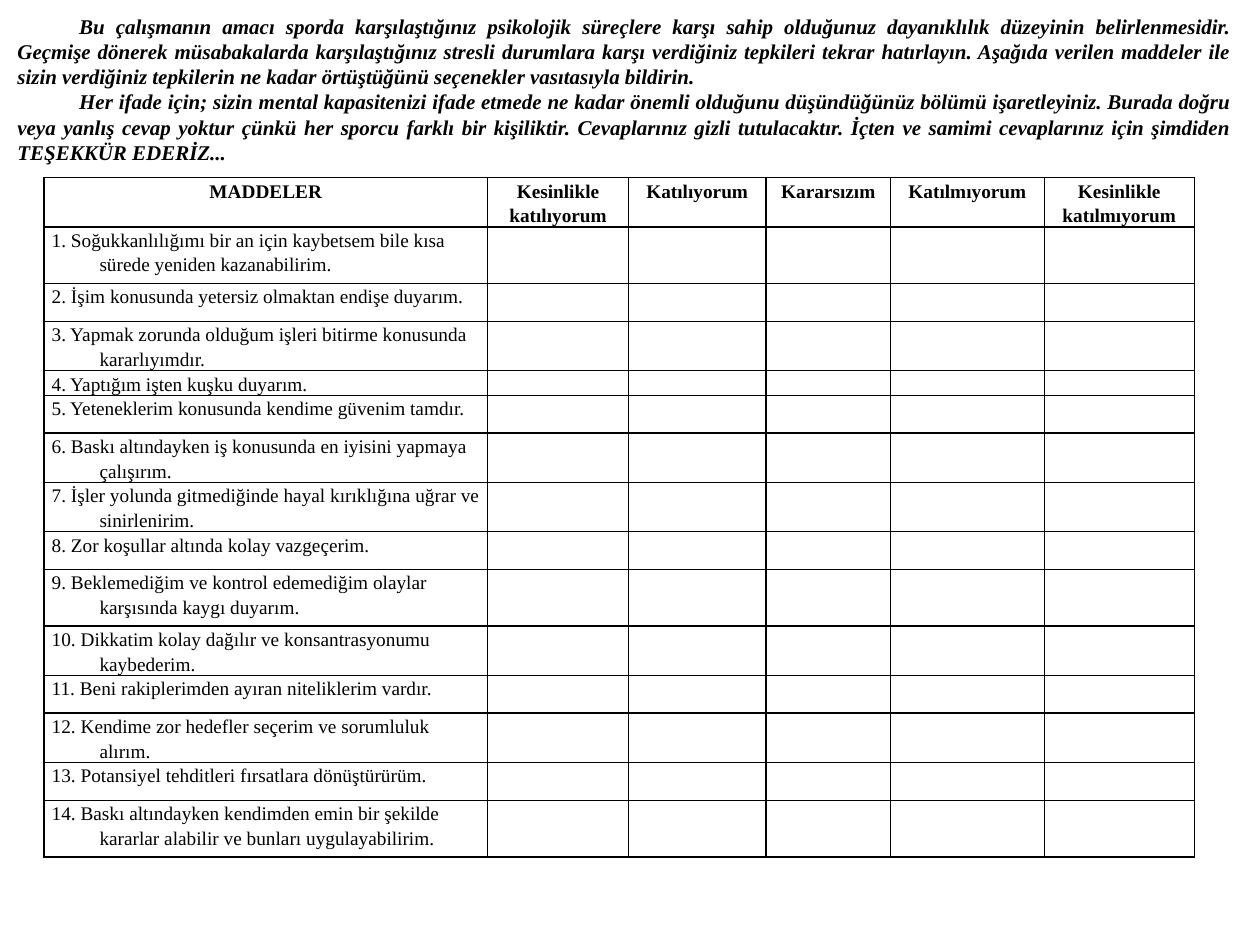
from dataclasses import dataclass

from lxml.etree import SubElement
from pptx import Presentation
from pptx.dml.color import RGBColor
from pptx.enum.text import MSO_ANCHOR, MSO_AUTO_SIZE, PP_ALIGN as Align
from pptx.oxml import parse_xml
from pptx.oxml.ns import nsdecls, qn
from pptx.util import Inches, Pt


@dataclass(frozen=True)
class Theme:
    font: str = "Times New Roman"
    ink: str = "000000"
    intro_size: int = 12
    table_size: int = 11
    border: int = 1


THEME = Theme()

INTRO = [
    "Bu çalışmanın amacı sporda karşılaştığınız psikolojik süreçlere karşı sahip "
    "olduğunuz dayanıklılık düzeyinin belirlenmesidir. Geçmişe dönerek müsabakalarda "
    "karşılaştığınız stresli durumlara karşı verdiğiniz tepkileri tekrar hatırlayın. "
    "Aşağıda verilen maddeler ile sizin verdiğiniz tepkilerin ne kadar örtüştüğünü "
    "seçenekler vasıtasıyla bildirin.",
    "Her ifade için; sizin mental kapasitenizi ifade etmede ne kadar önemli olduğunu "
    "düşündüğünüz bölümü işaretleyiniz. Burada doğru veya yanlış cevap yoktur çünkü "
    "her sporcu farklı bir kişiliktir. Cevaplarınız gizli tutulacaktır. İçten ve "
    "samimi cevaplarınız için şimdiden TEŞEKKÜR EDERİZ...",
]

COLUMNS = [
    ("MADDELER", 3.52),
    ("Kesinlikle katılıyorum", 1.12),
    ("Katılıyorum", 1.09),
    ("Kararsızım", 0.99),
    ("Katılmıyorum", 1.22),
    ("Kesinlikle katılmıyorum", 1.19),
]
HEADER_HEIGHT = 0.35

ITEMS = [
    ("Soğukkanlılığımı bir an için kaybetsem bile kısa sürede yeniden kazanabilirim.", 0.45),
    ("İşim konusunda yetersiz olmaktan endişe duyarım.", 0.3),
    ("Yapmak zorunda olduğum işleri bitirme konusunda kararlıyımdır.", 0.35),
    ("Yaptığım işten kuşku duyarım.", 0.18),
    ("Yeteneklerim konusunda kendime güvenim tamdır.", 0.3),
    ("Baskı altındayken iş konusunda en iyisini yapmaya çalışırım.", 0.35),
    ("İşler yolunda gitmediğinde hayal kırıklığına uğrar ve sinirlenirim.", 0.35),
    ("Zor koşullar altında kolay vazgeçerim.", 0.3),
    ("Beklemediğim ve kontrol edemediğim olaylar karşısında kaygı duyarım.", 0.45),
    ("Dikkatim kolay dağılır ve konsantrasyonumu kaybederim.", 0.35),
    ("Beni rakiplerimden ayıran niteliklerim vardır.", 0.3),
    ("Kendime zor hedefler seçerim ve sorumluluk alırım.", 0.35),
    ("Potansiyel tehditleri fırsatlara dönüştürürüm.", 0.3),
    ("Baskı altındayken kendimden emin bir şekilde kararlar alabilir ve bunları "
     "uygulayabilirim.", 0.45),
]


def write_text(paragraph, text, *, size, bold=False, italic=False,
               align=Align.LEFT, spacing=1.0, left=0, indent=0):
    paragraph.alignment = align
    paragraph.line_spacing = spacing
    properties = paragraph._p.get_or_add_pPr()
    properties.set("marL", str(Inches(left)))
    properties.set("indent", str(Inches(indent)))
    if not text:
        end = SubElement(paragraph._p, qn("a:endParaRPr"))
        end.set("sz", str(size * 100))
        return
    run = paragraph.add_run()
    run.text = text
    font = run.font
    font.name = THEME.font
    font.size = Pt(size)
    font.bold = bold
    font.italic = italic
    font.color.rgb = RGBColor.from_string(THEME.ink)


def add_intro(slide, left, top, width, height):
    box = slide.shapes.add_textbox(left, top, width, height)
    frame = box.text_frame
    frame.word_wrap = True
    frame.auto_size = MSO_AUTO_SIZE.SHAPE_TO_FIT_TEXT
    frame.vertical_anchor = MSO_ANCHOR.MIDDLE
    for index, text in enumerate(INTRO):
        paragraph = frame.add_paragraph() if index else frame.paragraphs[0]
        write_text(paragraph, text, size=THEME.intro_size, bold=True, italic=True,
                   align=Align.JUSTIFY, indent=0.49)


def style_cell(cell):
    cell.margin_left = cell.margin_right = Inches(0.06)
    cell.margin_top = cell.margin_bottom = 0
    cell.fill.background()
    properties = cell._tc.get_or_add_tcPr()
    for position, side in enumerate("LRTB"):
        properties.insert(position, parse_xml(
            f'<a:ln{side} {nsdecls("a")} w="{Pt(THEME.border)}"><a:solidFill>'
            f'<a:srgbClr val="{THEME.ink}"/></a:solidFill></a:ln{side}>'))


def add_questionnaire(slide, left, top, width, height):
    frame = slide.shapes.add_table(len(ITEMS) + 1, len(COLUMNS), left, top, width, height)
    table = frame.table
    table.first_row = table.horz_banding = False
    for column, (_, column_width) in zip(table.columns, COLUMNS):
        column.width = Inches(column_width)
    row_heights = [HEADER_HEIGHT] + [item_height for _, item_height in ITEMS]
    for row, row_height in zip(table.rows, row_heights):
        row.height = Inches(row_height)

    blanks = [""] * (len(COLUMNS) - 1)
    contents = [[label for label, _ in COLUMNS]]
    contents += [[f"{number}. {text}"] + blanks
                 for number, (text, _) in enumerate(ITEMS, 1)]
    header_format = dict(bold=True, align=Align.CENTER)
    item_format = dict(left=0.38, indent=-0.38)
    for row_index, texts in enumerate(contents):
        text_format = item_format if row_index else header_format
        for column_index, text in enumerate(texts):
            cell = table.cell(row_index, column_index)
            style_cell(cell)
            write_text(cell.text_frame.paragraphs[0], text, size=THEME.table_size,
                       spacing=1.15, **text_format)


def main():
    presentation = Presentation()
    presentation.slide_width = Inches(10)
    presentation.slide_height = Inches(7.5)
    slide = presentation.slides.add_slide(presentation.slide_layouts[6])
    add_questionnaire(slide, Inches(0.35), Inches(1.41), Inches(9.13), Inches(5.13))
    add_intro(slide, Inches(0.04), Inches(0.05), Inches(9.84), Inches(1.31))
    presentation.save("out.pptx")


if __name__ == "__main__":
    main()
